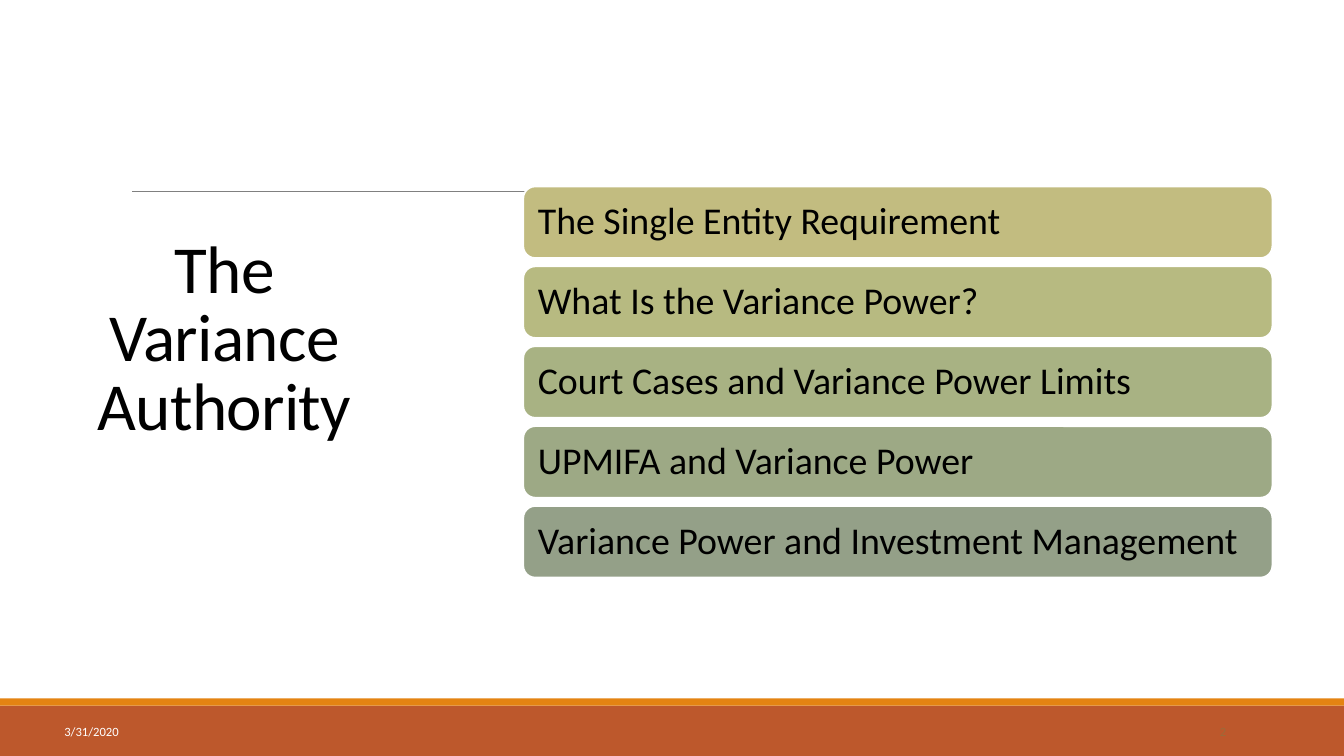
"""Build the agenda slide on the variance authority."""
from lxml import etree
from pptx import Presentation, util as u
from pptx.dml.color import RGBColor
from pptx.enum import shapes, text
from pptx.oxml.ns import qn

BLACK = RGBColor(0x00, 0x00, 0x00)
WHITE = RGBColor(0xFF, 0xFF, 0xFF)
GREY = RGBColor(0x80, 0x80, 0x80)
RUST = RGBColor(0xBD, 0x58, 0x2C)
ORANGE = RGBColor(0xE4, 0x83, 0x12)
BROWN = RGBColor(0x9B, 0x6B, 0x3A)
SAND = RGBColor(0xC2, 0xBC, 0x80)
OLIVE = RGBColor(0xB7, 0xBA, 0x81)
MOSS = RGBColor(0xA8, 0xB2, 0x83)
SAGE = RGBColor(0x9D, 0xA9, 0x85)
SLATE = RGBColor(0x94, 0xA0, 0x88)

TOPICS = [
    ("The Single Entity Requirement", SAND),
    ("What Is the Variance Power?", OLIVE),
    ("Court Cases and Variance Power Limits", MOSS),
    ("UPMIFA and Variance Power", SAGE),
    ("Variance Power and Investment Management", SLATE),
]
TOPIC_TOP, TOPIC_BOTTOM, TOPIC_HEIGHT = 1.85, 5.73, 0.71
TOPIC_PITCH = (TOPIC_BOTTOM - TOPIC_HEIGHT - TOPIC_TOP) / (len(TOPICS) - 1)


class Deck:
    """Hold the style and the current slide."""

    font = "Calibri"

    def __init__(self, prs):
        """Add a blank slide to draw on."""
        self.s = prs.slides.add_slide(prs.slide_layouts[6])

    def fill_text(self, sp, words, size, color, align=text.PP_ALIGN.LEFT, spacing=1.0, tracking=0):
        """Put one vertically centred paragraph into a shape."""
        tf = sp.text_frame
        tf.word_wrap = True
        tf.vertical_anchor = text.MSO_ANCHOR.MIDDLE
        p = tf.paragraphs[0]
        p.alignment = align
        p.line_spacing = spacing
        r = p.add_run()
        r.text = words
        r.font.name = self.font
        r.font.size = u.Pt(size)
        r.font.color.rgb = color
        if tracking:
            r._r.get_or_add_rPr().set("spc", str(round(tracking * 100)))
        return tf

    def label(self, box, words, size, color, **style):
        """Add a text box."""
        sp = self.s.shapes.add_textbox(*map(u.Inches, box))
        return self.fill_text(sp, words, size, color, **style)

    def block(self, box, fill, kind=shapes.MSO_SHAPE.RECTANGLE):
        """Add a filled shape without an outline."""
        sp = self.s.shapes.add_shape(kind, *map(u.Inches, box))
        sp.shadow.inherit = False
        sp.fill.solid()
        sp.fill.fore_color.rgb = fill
        sp.line.fill.background()
        return sp

    def topic(self, box, words, fill):
        """Add a rounded bar with a topic in it."""
        sp = self.block(box, fill, shapes.MSO_SHAPE.ROUNDED_RECTANGLE)
        sp.line.color.rgb = WHITE
        sp.line.width = u.Pt(1.25)
        tf = self.fill_text(sp, words, 27, BLACK, spacing=0.9)
        tf.margin_left = tf.margin_right = u.Inches(0.11)

    def rule(self, left, right, y):
        """Add a thin horizontal line."""
        ends = map(u.Inches, (left, y, right, y))
        sp = self.s.shapes.add_connector(shapes.MSO_CONNECTOR.STRAIGHT, *ends)
        sp.line.color.rgb = GREY
        sp.line.width = u.Pt(0.5)
        etree.SubElement(sp._element.spPr, qn("a:effectLst"))


def main():
    """Draw the slide and save it."""
    prs = Presentation()
    prs.slide_width, prs.slide_height = u.Inches(13.33), u.Inches(7.5)
    deck = Deck(prs)
    deck.block((0, 7, 13.33, 0.5), RUST)
    deck.block((0, 6.93, 13.33, 0.07), ORANGE)
    deck.rule(1.31, 12.21, 1.9)
    tf = deck.label((0.54, 0.57, 3.37, 6.31), "The Variance Authority", 48, BLACK,
                    align=text.PP_ALIGN.CENTER, spacing=0.85, tracking=-0.5)
    tf.margin_bottom = u.Inches(0.73)
    deck.label((0.54, 7.06, 1.9, 0.4), "3/31/2020", 9, WHITE)
    deck.label((10.95, 7.06, 1.31, 0.4), "2", 9, BROWN, align=text.PP_ALIGN.RIGHT)
    for i, (words, fill) in enumerate(TOPICS):
        deck.topic((5.19, TOPIC_TOP + i * TOPIC_PITCH, 7.43, TOPIC_HEIGHT), words, fill)
    prs.save("out.pptx")


if __name__ == "__main__":
    main()
